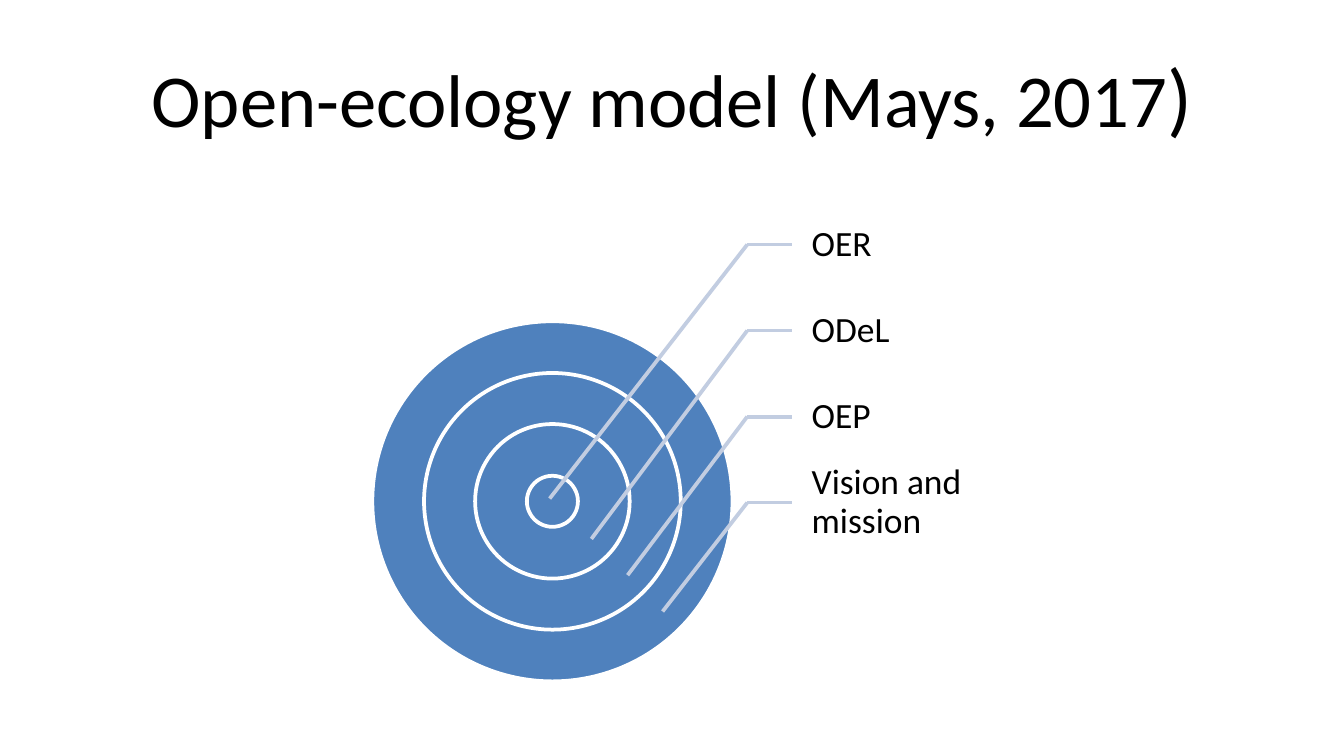
from dataclasses import dataclass

from lxml.etree import SubElement
from pptx import Presentation
from pptx.dml.color import RGBColor
from pptx.enum.shapes import MSO_CONNECTOR, MSO_SHAPE
from pptx.enum.text import MSO_ANCHOR as Anchor, PP_ALIGN as Align
from pptx.oxml.ns import qn
from pptx.slide import Slide
from pptx.text.text import TextFrame
from pptx.util import Pt

PX = 4572  # EMU per px, 200 px to the inch


@dataclass(frozen=True)
class Theme:
    font: str = "Calibri"
    text: RGBColor = RGBColor(0x00, 0x00, 0x00)
    disc: RGBColor = RGBColor(0x4F, 0x81, 0xBD)
    rim: RGBColor = RGBColor(0xFF, 0xFF, 0xFF)
    leader: RGBColor = RGBColor(0xC2, 0xCD, 0xE1)
    title_size: int = 40
    bracket_size: int = 44
    label_size: int = 19
    line_width: int = 2


@dataclass(frozen=True)
class Layer:
    label: str
    diameter: int
    target: tuple[int, int]  # where the leader ends inside the ring


THEME = Theme()
SLIDE_W, SLIDE_H = 2000, 1125
CENTER_X, CENTER_Y = 822, 746
ELBOW_X, LABEL_X = 1112, 1178
LABEL_TOP, LABEL_W, LABEL_H = 300, 268, 128
LAYERS = (
    Layer("OER", 76, (818, 742)),
    Layer("ODeL", 230, (880, 802)),
    Layer("OEP", 382, (934, 856)),
    Layer("Vision and mission", 536, (986, 910)),
)


def px(*values: int) -> list[int]:
    return [v * PX for v in values]


def add_text_frame(s: Slide, box: tuple[int, int, int, int],
                   insets: tuple[int, int, int, int], anchor: Anchor) -> TextFrame:
    tf = s.shapes.add_textbox(*px(*box)).text_frame
    tf.word_wrap = True
    tf.vertical_anchor = anchor
    tf.margin_left, tf.margin_top, tf.margin_right, tf.margin_bottom = px(*insets)
    font = tf.paragraphs[0].font
    font.name = THEME.font
    font.color.rgb = THEME.text
    return tf


def add_title(s: Slide) -> None:
    tf = add_text_frame(s, (138, 60, 1724, 218), (20, 8, 20, 8), Anchor.TOP)
    p = tf.paragraphs[0]
    p.alignment = Align.CENTER
    for text, size in (("Open-ecology model (Mays, 2017", THEME.title_size),
                       (")", THEME.bracket_size)):
        r = p.add_run()
        r.text = text
        r.font.size = Pt(size)


def add_disc(s: Slide, diameter: int) -> None:
    radius = diameter // 2
    sp = s.shapes.add_shape(MSO_SHAPE.OVAL, *px(CENTER_X - radius, CENTER_Y - radius,
                                                diameter, diameter))
    sp.shadow.inherit = False
    sp.fill.solid()
    sp.fill.fore_color.rgb = THEME.disc
    sp.line.color.rgb = THEME.rim
    sp.line.width = Pt(THEME.line_width)


def add_line(s: Slide, start: tuple[int, int], end: tuple[int, int]) -> None:
    line = s.shapes.add_connector(MSO_CONNECTOR.STRAIGHT, *px(*start, *end))
    line.line.color.rgb = THEME.leader
    line.line.width = Pt(THEME.line_width)
    SubElement(line._element.spPr, qn("a:effectLst"))


def add_callout(s: Slide, layer: Layer, top: int) -> None:
    """Draw a layer's label and the bent leader that ties it to its ring."""
    tf = add_text_frame(s, (LABEL_X, top, LABEL_W, LABEL_H), (30, 6, 6, 6), Anchor.MIDDLE)
    p = tf.paragraphs[0]
    p.text = layer.label
    p.line_spacing = 0.9
    p.font.size = Pt(THEME.label_size)
    elbow = (ELBOW_X, top + LABEL_H // 2)
    add_line(s, elbow, (LABEL_X, elbow[1]))
    add_line(s, elbow, layer.target)


def main() -> None:
    prs = Presentation()
    prs.slide_width, prs.slide_height = px(SLIDE_W, SLIDE_H)
    s = prs.slides.add_slide(prs.slide_layouts[6])
    add_title(s)
    for layer in reversed(LAYERS):
        add_disc(s, layer.diameter)
    for i, layer in enumerate(LAYERS):
        add_callout(s, layer, LABEL_TOP + i * LABEL_H)
    prs.save("out.pptx")


if __name__ == "__main__":
    main()
